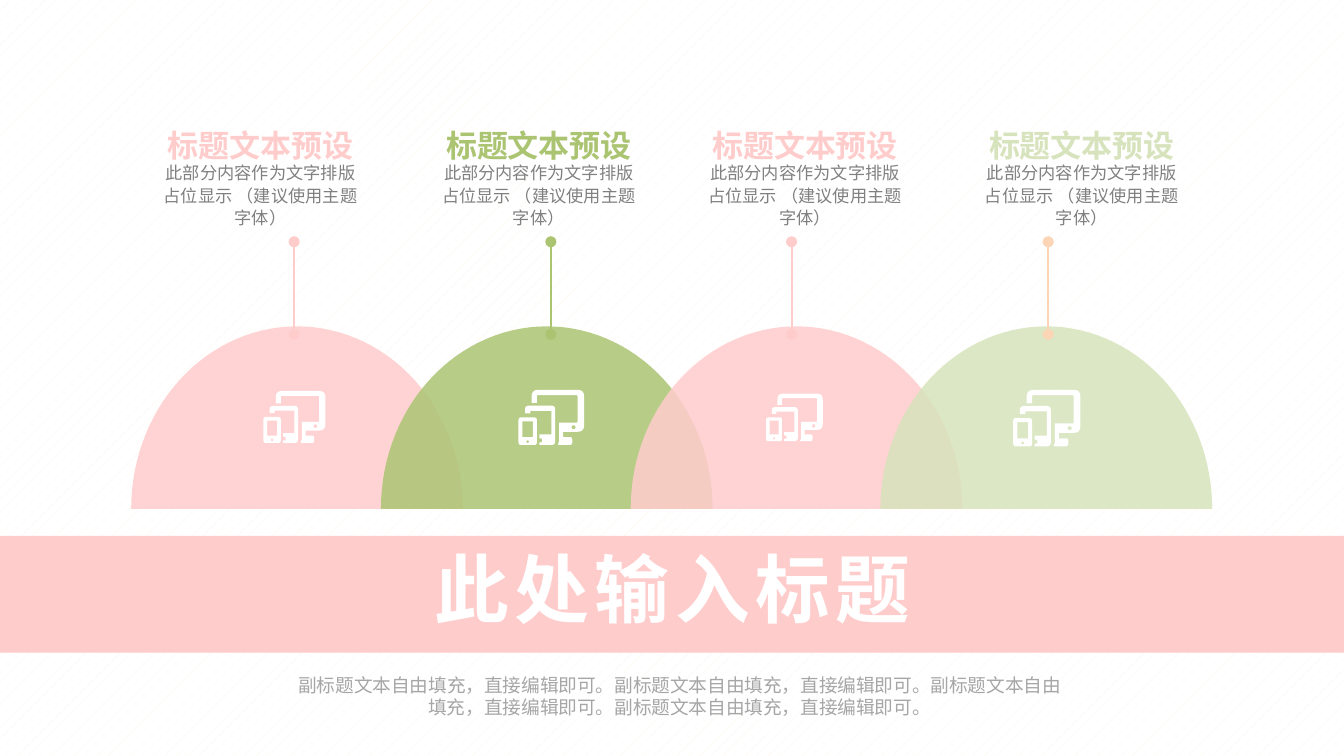
import math
from lxml import etree
from pptx import Presentation
from pptx import util as u
from pptx.dml.color import RGBColor
from pptx.enum import dml, shapes, text
from pptx.oxml.ns import qn

FONT = "Noto Sans CJK SC"
PINK, GREEN, PALE, PEACH = "FFCCCC", "ABC472", "D7E3BC", "FBD5B5"
WHITE, GREY, SILVER = "FFFFFF", "808080", "A6A6A6"
HEAD = "标题文本预设"
BODY = "此部分内容作为文字排版占位显示 （建议使用主题字体）"
NOTE = ("副标题文本自由填充，直接编辑即可。副标题文本自由填充，直接编辑即可。副标题文本自由\v"
        "填充，直接编辑即可。副标题文本自由填充，直接编辑即可。")

# text left, pin x, icon left, icon top, icon width, colour, pin colour
ITEMS = [
    (3.07, 5.56, 4.98, 7.39, 1.17, PINK, PINK),
    (8.33, 10.41, 9.80, 7.37, 1.24, GREEN, GREEN),
    (13.36, 14.96, 14.48, 7.44, 1.07, PINK, PINK),
    (18.59, 19.81, 19.15, 7.37, 1.27, PALE, PEACH),
]


def box(x, y, w, h, r=0):
    return [(x, y, r), (x + w, y, r), (x + w, y + h, r), (x, y + h, r)]


PHONE = [box(0, 21, 14, 21, 2), box(3, 24, 8, 12), box(6, 38.5, 2, 2, 1)]
TABLET = [[(5, 18, 0), (5, 12, 3), (28, 12, 3), (28, 42, 3), (16, 42, 0),
           (16, 40, 0), (18, 40, 1), (18, 37, 1), (16, 37, 0), (16, 34, 0),
           (25, 34, 0), (25, 16, 0), (9, 16, 0), (9, 18, 0)]]
SCREEN = [[(10, 10, 0), (10, 0, 5), (50, 0, 5), (50, 32, 5), (34, 32, 0),
           (34, 36, 0), (41, 36, 2), (41, 42, 2), (30, 42, 0), (31, 39, 0),
           (31, 25, 0), (45, 25, 1), (45, 4, 1), (14, 4, 1), (14, 10, 0)],
          box(40.5, 27, 3, 3, 1.5)]


def hue(code):
    return RGBColor.from_string(code)


def put(shape, words, size=10, color=GREY, bold=False, gap=None, lead=None,
        anchor=text.MSO_ANCHOR.MIDDLE, wrap=True, inset=None):
    frame = shape.text_frame
    frame.auto_size = text.MSO_AUTO_SIZE.NONE
    frame.word_wrap = wrap
    frame.vertical_anchor = anchor
    if inset is not None:
        frame.margin_left = frame.margin_right = u.Cm(inset)
        frame.margin_top = frame.margin_bottom = u.Cm(inset)
    para = frame.paragraphs[0]
    para.text = words
    para.alignment = text.PP_ALIGN.CENTER
    if lead:
        para.line_spacing = lead
    for run in para.runs:
        font = run.font
        font.name, font.size, font.bold = FONT, u.Pt(size), bold
        font.color.rgb = hue(color)
        props = run._r.get_or_add_rPr()
        etree.SubElement(props, qn("a:ea")).set("typeface", FONT)
        if gap:
            props.set("spc", str(gap * 100))
    return shape


def label(slide, x, y, w, h, words, **style):
    area = slide.shapes.add_textbox(u.Cm(x), u.Cm(y), u.Cm(w), u.Cm(h))
    return put(area, words, **style)


def paint(shape, color, alpha=None):
    shape.shadow.inherit = False
    shape.fill.solid()
    shape.fill.fore_color.rgb = hue(color)
    shape.line.fill.background()
    if alpha:
        tint = shape._element.spPr.find(qn("a:solidFill"))[0]
        etree.SubElement(tint, qn("a:alpha")).set("val", str(alpha * 1000))


def trace(slide, loops, color, alpha=None):
    loops = [[(u.Cm(x), u.Cm(y)) for x, y in loop] for loop in loops]
    pen = slide.shapes.build_freeform(*loops[0][0])
    for i, loop in enumerate(loops):
        if i:
            pen.move_to(*loop[0])
        pen.add_line_segments(loop[1:], close=True)
    paint(pen.convert_to_shape(), color, alpha)


def dome(slide, x, y, w, h, color):
    turns = [math.pi * i / 60 for i in range(61)]
    arc = [(x + w / 2 * (1 + math.cos(t)), y + h * (1 - math.sin(t))) for t in turns]
    trace(slide, [arc], color, 85)


def bend(loop):
    points = []
    for i, (x, y, r) in enumerate(loop):
        if not r:
            points.append((x, y))
            continue
        ends = []
        for px, py, _ in (loop[i - 1], loop[(i + 1) % len(loop)]):
            part = r / math.dist((x, y), (px, py))
            ends.append((x + (px - x) * part, y + (py - y) * part))
        (ax, ay), (bx, by) = ends
        for t in (0, 0.25, 0.5, 0.75, 1):
            a, m, b = (1 - t) ** 2, 2 * t * (1 - t), t * t
            points.append((a * ax + m * x + b * bx, a * ay + m * y + b * by))
    return points


def icon(slide, x, y, w):
    unit = w / 50
    loops = [[(x + px * unit, y + py * unit) for px, py in bend(loop)]
             for loop in PHONE + TABLET + SCREEN]
    trace(slide, loops, WHITE)


def pin(slide, x, color):
    line = slide.shapes.add_connector(
        shapes.MSO_CONNECTOR.STRAIGHT, u.Cm(x), u.Cm(6.32), u.Cm(x), u.Cm(4.57))
    line.line.color.rgb = hue(color)
    line.line.width = u.Pt(1)
    stroke = line.line._get_or_add_ln()
    for end in ("a:headEnd", "a:tailEnd"):
        etree.SubElement(stroke, qn(end)).set("type", "oval")
    etree.SubElement(line._element.spPr, qn("a:effectLst"))


def banner(slide):
    band = slide.shapes.add_shape(
        shapes.MSO_SHAPE.RECTANGLE, 0, u.Cm(10.13), u.Cm(25.4), u.Cm(2.21))
    paint(band, PINK)
    title = slide.shapes.title
    title.left, title.top = u.Cm(7.11), u.Cm(10.13)
    title.width, title.height = u.Cm(11.2), u.Cm(2.21)
    put(title, "此处输入标题", size=40, color=WHITE, bold=True, gap=3,
        anchor=text.MSO_ANCHOR.TOP)
    band._element.addnext(title._element)


def main():
    deck = Presentation()
    deck.slide_width, deck.slide_height = u.Cm(25.4), u.Cm(14.29)
    slide = deck.slides.add_slide(deck.slide_layouts[5])
    back = slide.background.fill
    back.patterned()
    back.pattern = dml.MSO_PATTERN.DASHED_UPWARD_DIAGONAL
    back.fore_color.rgb, back.back_color.rgb = hue("FEF7F0"), hue(WHITE)

    for left, _, _, _, _, color, _ in ITEMS:
        label(slide, left, 3.02, 3.71, 1.3, BODY, size=9.2, lead=1.1, inset=0)
        label(slide, left, 2.39, 3.71, 0.69, HEAD, size=16.6, color=color,
              bold=True, wrap=False, inset=0)
    pin(slide, ITEMS[0][1], ITEMS[0][6])
    for i, item in enumerate(ITEMS):
        dome(slide, 2.48 + 4.72 * i, 6.17, 6.27, 3.45, item[5])
    for item in ITEMS[1:]:
        pin(slide, item[1], item[6])
    for _, _, left, top, wide, _, _ in ITEMS:
        icon(slide, left, top, wide)

    banner(slide)
    note = label(slide, 4.98, 12.55, 15.72, 1.73, NOTE, size=10, color=SILVER)
    note.text_frame.margin_bottom = u.Cm(0.64)
    deck.save("out.pptx")


if __name__ == "__main__":
    main()
